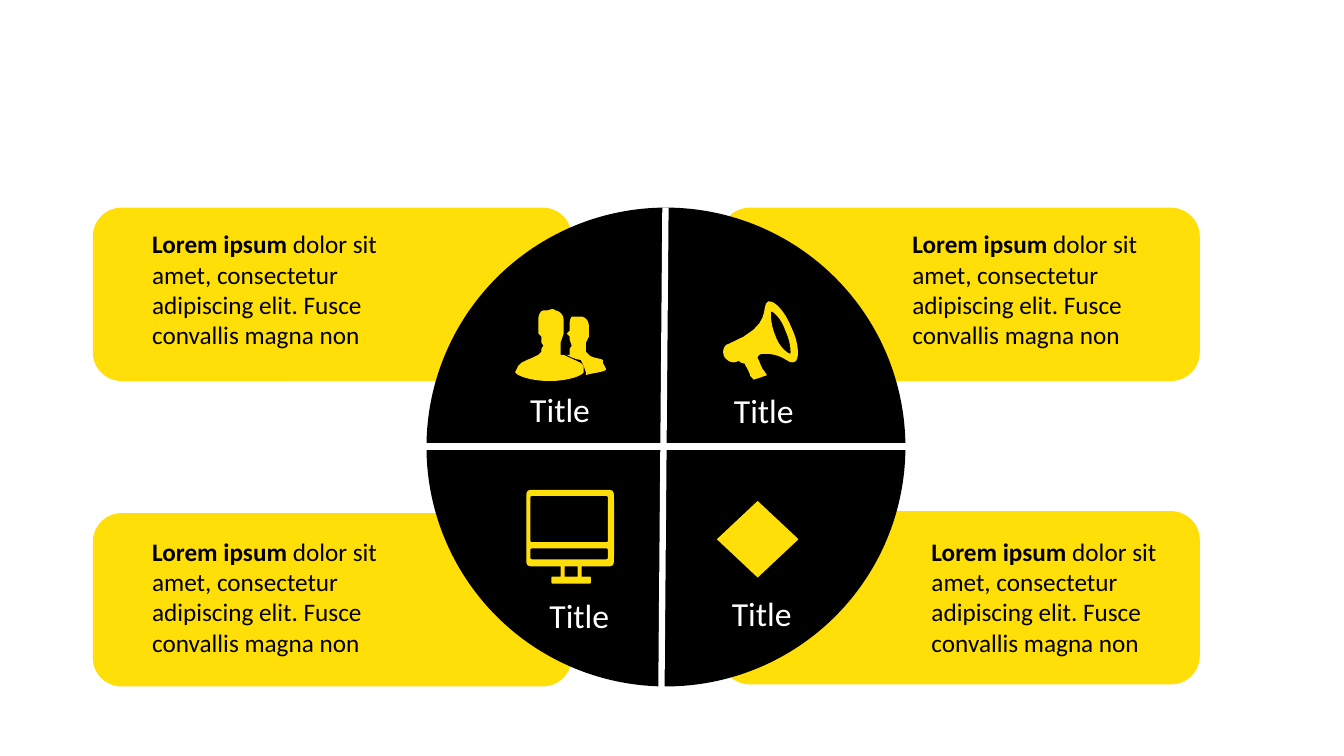
from pptx import Presentation
from pptx.dml.color import RGBColor
from pptx.enum.shapes import MSO_CONNECTOR, MSO_SHAPE
from pptx.enum.text import MSO_AUTO_SIZE, PP_ALIGN
from pptx.oxml.ns import qn
from pptx.util import Inches, Pt
from lxml import etree

ROUND, OVAL, DIAMOND = MSO_SHAPE.ROUNDED_RECTANGLE, MSO_SHAPE.OVAL, MSO_SHAPE.DIAMOND
STRAIGHT = MSO_CONNECTOR.STRAIGHT
FIT = MSO_AUTO_SIZE.SHAPE_TO_FIT_TEXT
LEFT, CENTER = PP_ALIGN.LEFT, PP_ALIGN.CENTER
YELLOW, BLACK, WHITE = "FFDF07", "000000", "FFFFFF"
FONT = "Calibri"
BODY = [("Lorem ipsum ", True),
        ("dolor sit amet, consectetur adipiscing elit. Fusce convallis magna non", False)]
TITLE = [("Title", False)]

CARDS = [(0.92, 5.09), (7.15, 2.06), (7.15, 5.07), (0.92, 2.06)]
NOTES = [(1.41, 2.22), (1.41, 5.27), (8.95, 2.22), (9.14, 5.27)]
TITLES = [(4.71, 3.81), (6.73, 3.82), (4.9, 5.85), (6.71, 5.83)]

# Contours: a start point, then lines (x, y) or cubic curves (x1, y1, x2, y2, x, y).
BACK = [[
    (5.98, 3.6), (5.98, 3.57), (5.93, 3.55, 5.87, 3.55, 5.84, 3.52), (5.81, 3.49),
    (5.81, 3.4), (5.84, 3.34), (5.84, 3.23), (5.84, 3.17, 5.79, 3.14, 5.76, 3.14),
    (5.7, 3.14), (5.67, 3.14), (5.65, 3.17, 5.65, 3.2, 5.65, 3.23), (5.65, 3.28),
    (5.62, 3.31), (5.65, 3.34), (5.65, 3.37), (5.67, 3.43), (5.65, 3.46), (5.65, 3.52),
    (5.62, 3.52), (5.67, 3.55, 5.73, 3.57, 5.76, 3.57), (5.79, 3.63), (5.81, 3.69),
    (5.81, 3.72), (5.93, 3.69, 6.01, 3.69, 6.01, 3.66)]]
FRONT = [[
    (5.76, 3.6), (5.7, 3.57, 5.65, 3.55, 5.59, 3.52), (5.56, 3.52), (5.56, 3.4),
    (5.59, 3.31), (5.59, 3.17), (5.59, 3.11, 5.53, 3.08, 5.51, 3.08),
    (5.48, 3.05, 5.45, 3.08, 5.42, 3.08), (5.39, 3.08),
    (5.37, 3.08, 5.34, 3.11, 5.34, 3.17), (5.34, 3.31), (5.37, 3.34), (5.37, 3.4),
    (5.39, 3.43), (5.37, 3.46), (5.37, 3.49), (5.34, 3.52), (5.28, 3.55), (5.23, 3.57),
    (5.17, 3.6), (5.14, 3.63), (5.11, 3.69), (5.11, 3.72, 5.25, 3.78, 5.45, 3.78),
    (5.65, 3.78, 5.79, 3.72, 5.79, 3.69), (5.79, 3.63)]]
HORN = [
    [(7.85, 3.25), (7.79, 3.1, 7.69, 2.98, 7.62, 2.99),
     (7.53, 3.04, 7.69, 3.22, 7.23, 3.41), (7.18, 3.42, 7.16, 3.48, 7.18, 3.53),
     (7.19, 3.56, 7.25, 3.61, 7.3, 3.59), (7.33, 3.58),
     (7.36, 3.62, 7.39, 3.59, 7.39, 3.62), (7.41, 3.65, 7.44, 3.71, 7.44, 3.73),
     (7.46, 3.74, 7.47, 3.78, 7.49, 3.76), (7.5, 3.76, 7.56, 3.74, 7.58, 3.73),
     (7.61, 3.73, 7.61, 3.71, 7.59, 3.7), (7.59, 3.68, 7.56, 3.67, 7.56, 3.65),
     (7.55, 3.64, 7.53, 3.58, 7.52, 3.56), (7.5, 3.55, 7.53, 3.51, 7.56, 3.51),
     (7.78, 3.5, 7.81, 3.62, 7.88, 3.59), (7.93, 3.58, 7.93, 3.41, 7.85, 3.25)],
    [(7.84, 3.51), (7.82, 3.51, 7.73, 3.45, 7.69, 3.33),
     (7.64, 3.21, 7.64, 3.09, 7.65, 3.09), (7.67, 3.09, 7.75, 3.16, 7.79, 3.28),
     (7.85, 3.41, 7.84, 3.5, 7.84, 3.51)]]


def box(x1, y1, x2, y2, r=0.0):
    """Contour of a rectangle with corner radius r."""
    return [(x1 + r, y1), (x2 - r, y1), (x2, y1, x2, y1, x2, y1 + r),
            (x2, y2 - r), (x2, y2, x2, y2, x2 - r, y2),
            (x1 + r, y2), (x1, y2, x1, y2, x1, y2 - r),
            (x1, y1 + r), (x1, y1, x1, y1, x1 + r, y1)]


SCREEN = [box(5.22, 4.86, 6.09, 5.62, 0.1), box(5.26, 4.92, 6.03, 5.38, 0.04),
          box(5.26, 5.44, 6.03, 5.55, 0.04), box(5.56, 5.62, 5.6, 5.72),
          box(5.73, 5.62, 5.77, 5.72), box(5.47, 5.72, 5.86, 5.79, 0.02)]


def color(code):
    return RGBColor.from_string(code)


def paint(shape, fill):
    shape.shadow.inherit = False
    shape.fill.solid()
    shape.fill.fore_color.rgb = color(fill)
    shape.line.fill.background()


def add_solid(slide, kind, x, y, w, h, fill):
    shape = slide.shapes.add_shape(kind, Inches(x), Inches(y), Inches(w), Inches(h))
    paint(shape, fill)


def add_rule(slide, x1, y1, x2, y2):
    line = slide.shapes.add_connector(
        STRAIGHT, Inches(x1), Inches(y1), Inches(x2), Inches(y2))
    line.line.color.rgb = color(WHITE)
    line.line.width = Pt(4.5)
    etree.SubElement(line._element.spPr, qn("a:effectLst"))


def trace(contour, steps=8):
    """Turn a contour into points, sampling its curves."""
    points = [contour[0]]
    for part in contour[1:]:
        if len(part) == 2:
            points.append(part)
            continue
        x0, y0 = points[-1]
        x1, y1, x2, y2, x3, y3 = part
        for step in range(1, steps + 1):
            t = step / steps
            a, b, c, d = (1 - t) ** 3, 3 * t * (1 - t) ** 2, 3 * t * t * (1 - t), t ** 3
            points.append((a * x0 + b * x1 + c * x2 + d * x3,
                           a * y0 + b * y1 + c * y2 + d * y3))
    return [(Inches(x), Inches(y)) for x, y in points]


def add_icon(shapes, contours):
    first, *rest = [trace(contour) for contour in contours]
    pen = shapes.build_freeform(*first[0])
    pen.add_line_segments(first[1:])
    for points in rest:
        pen.move_to(*points[0])
        pen.add_line_segments(points[1:])
    paint(pen.convert_to_shape(), YELLOW)


def add_text(slide, x, y, w, h, parts, size, tint, align):
    frame = slide.shapes.add_textbox(Inches(x), Inches(y), Inches(w), Inches(h)).text_frame
    frame.word_wrap = True
    frame.auto_size = FIT
    par = frame.paragraphs[0]
    par.alignment = align
    for text, bold in parts:
        run = par.add_run()
        run.text = text
        run.font.name = FONT
        run.font.size = Pt(size)
        run.font.bold = bold
        run.font.color.rgb = color(tint)


def main():
    deck = Presentation()
    deck.slide_width, deck.slide_height = Inches(13.33), Inches(7.5)
    slide = deck.slides.add_slide(deck.slide_layouts[6])

    for x, y in CARDS:
        add_solid(slide, ROUND, x, y, 4.75, 1.72, YELLOW)
    add_solid(slide, OVAL, 4.23, 2.06, 4.75, 4.75, BLACK)
    add_rule(slide, 6.6, 2.06, 6.56, 6.87)
    add_rule(slide, 4.23, 4.43, 9.1, 4.43)

    people = slide.shapes.add_group_shape().shapes
    for person in (BACK, FRONT):
        add_icon(people, person)
    add_icon(slide.shapes, HORN)
    add_icon(slide.shapes, SCREEN)
    add_solid(slide, DIAMOND, 7.11, 4.97, 0.81, 0.76, YELLOW)

    for x, y in TITLES:
        add_text(slide, x, y, 1.69, 0.5, TITLE, 24, WHITE, CENTER)
    for x, y in NOTES:
        add_text(slide, x, y, 2.98, 1.31, BODY, 18, BLACK, LEFT)
    deck.save("out.pptx")


if __name__ == "__main__":
    main()
